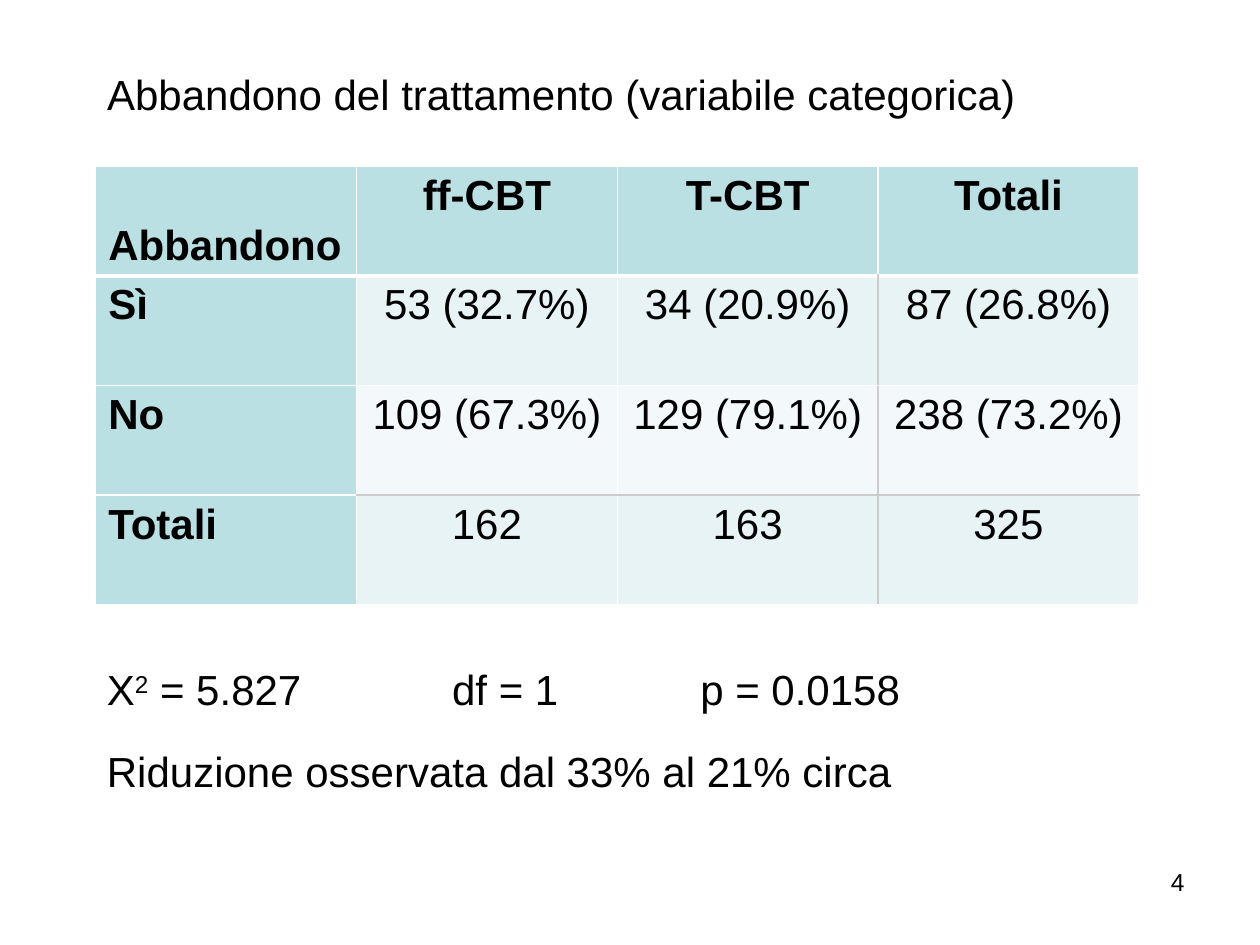
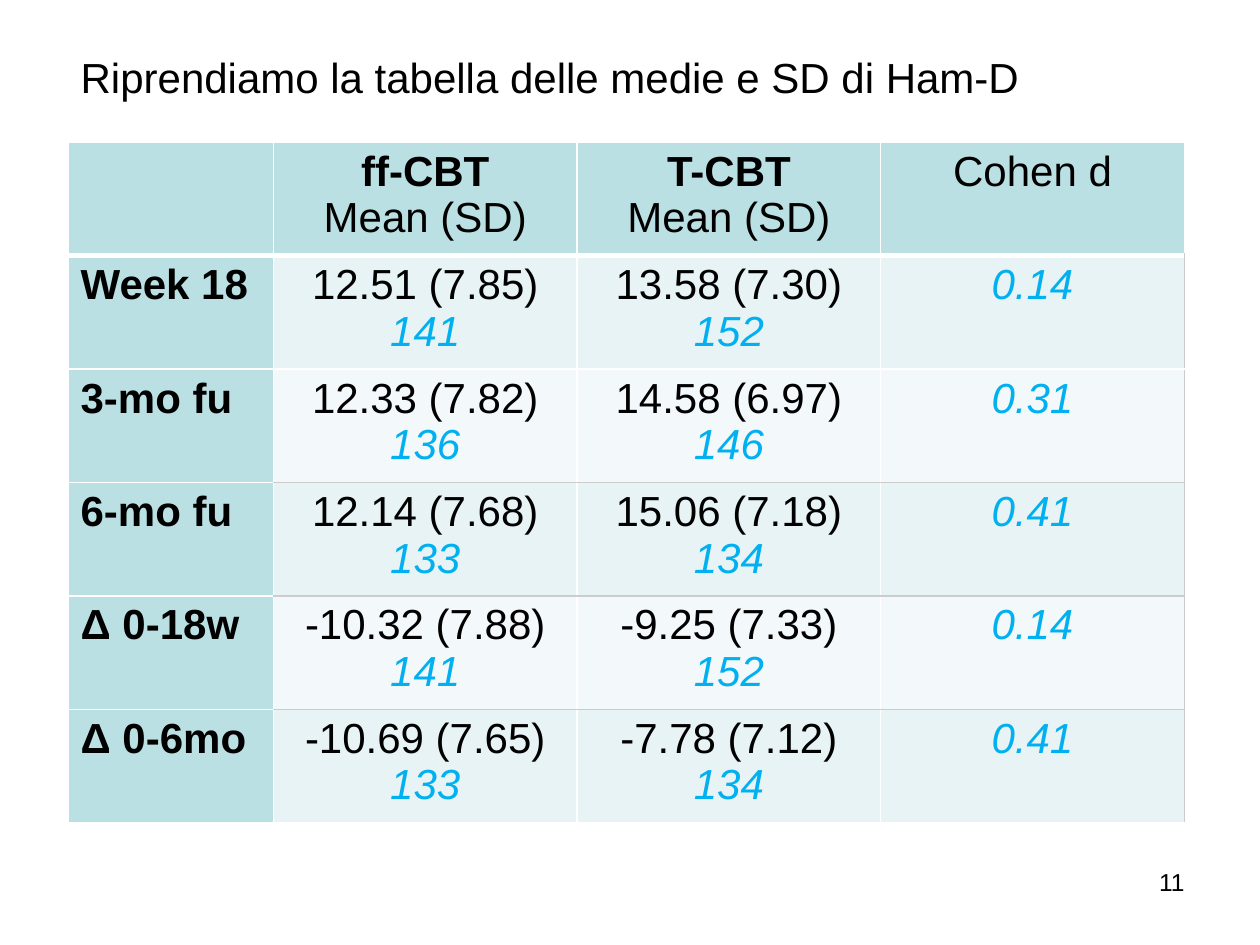
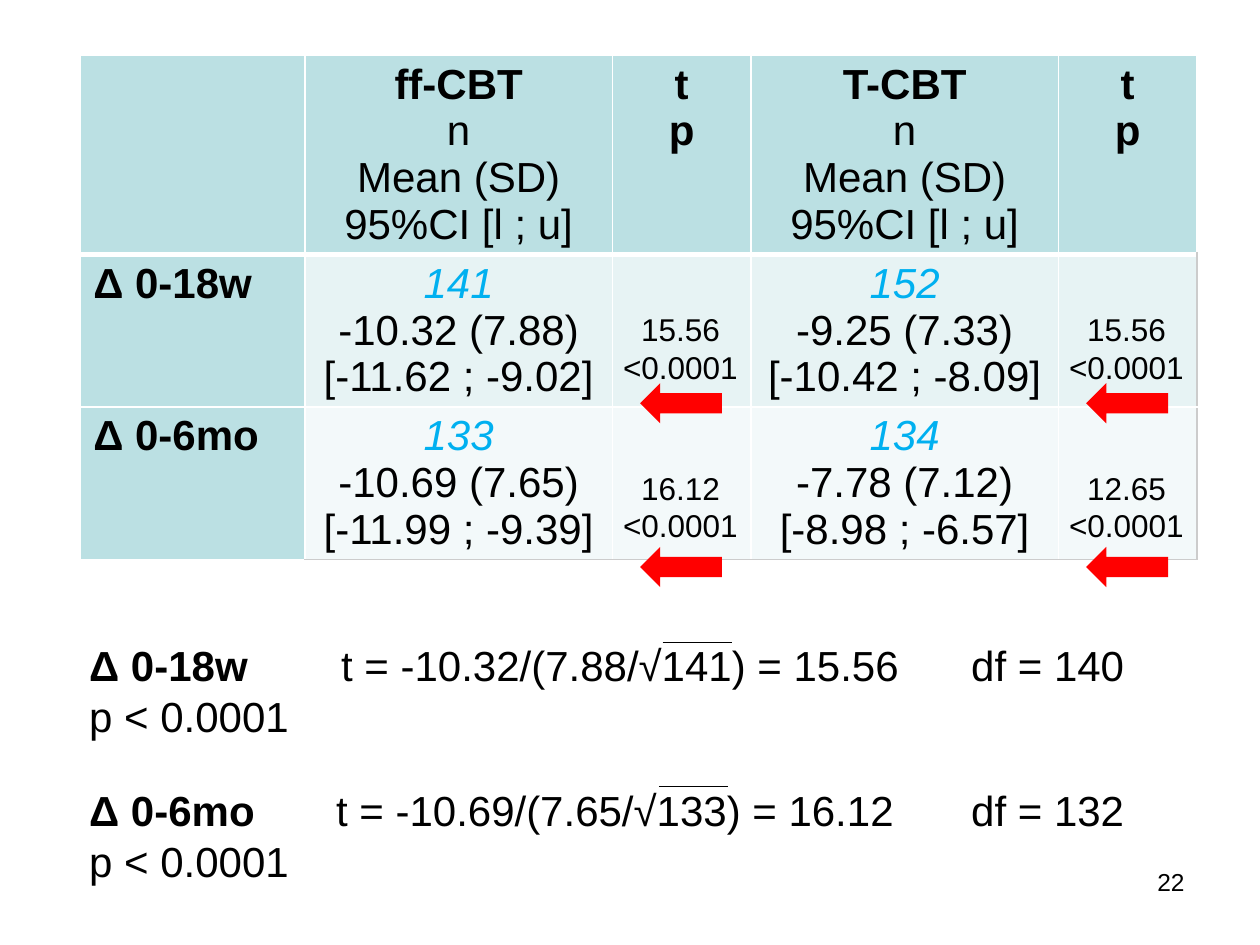
from lxml import etree
from pptx import Presentation
from pptx import util as u
from pptx.dml.color import RGBColor
from pptx.enum import shapes, text
from pptx.oxml import ns

COLORS = {"text": "000000", "accent": "00B0F0", "head": "BBE0E3", "odd": "E7F3F4",
          "even": "F3F9FA", "rule": "FFFFFF", "grey": "CCCCCC", "arrow": "FF0000"}
FONT = "Arial"
BODY, SMALL, NUMBER = 24, 18, 14
TABLE_PITCH, TEXT_PITCH = 1.11, 1.2
LEFT, CENTER, RIGHT = text.PP_ALIGN.LEFT, text.PP_ALIGN.CENTER, text.PP_ALIGN.RIGHT
# A mark at the start of a segment sets its look: * bold, _ accent italic, ^ superscript.
MARKS = {"*": {"bold": True}, "_": {"italic": True}, "^": {}}

SLIDES = [
    {"number": "4", "title": "Abbandono del trattamento (variabile categorica)",
     "title_box": (0.75, 0.49, 8.5, 0.5),
     "table_at": (0.76, 1.32), "columns": [2.07] * 4, "rows": [0.87] * 4,
     "grey_rows": {3}, "grey_columns": {3},
     "cells": [["*Abbandono", "*ff-CBT", "*T-CBT", "*Totali"],
               ["*Sì", "53 (32.7%)", "34 (20.9%)", "87 (26.8%)"],
               ["*No", "109 (67.3%)", "129 (79.1%)", "238 (73.2%)"],
               ["*Totali", "162", "163", "325"]],
     "notes": [((0.75, 5.22, 8.52, 1.16),
                "X|^2| = 5.827\tdf = 1\tp = 0.0158\nRiduzione osservata dal 33% al 21% circa",
                (2.74, 4.71))]},
    {"number": "11", "title": "Riprendiamo la tabella delle medie e SD di Ham-D",
     "title_box": (0.54, 0.36, 8.52, 0.5),
     "table_at": (0.54, 1.13), "columns": [1.63] + [2.41] * 3, "rows": [0.9] * 6,
     "grey_rows": {3, 4, 5}, "grey_columns": {4},
     "cells": [["", "*ff-CBT\nMean (SD)", "*T-CBT\nMean (SD)", "Cohen d"],
               ["*Week 18", "12.51 (7.85)\n_141", "13.58 (7.30)\n_152", "_0.14"],
               ["*3-mo fu", "12.33 (7.82)\n_136", "14.58 (6.97)\n_146", "_0.31"],
               ["*6-mo fu", "12.14 (7.68)\n_133", "15.06 (7.18)\n_134", "_0.41"],
               ["*Δ 0-18w", "-10.32 (7.88)\n_141", "-9.25 (7.33)\n_152", "_0.14"],
               ["*Δ 0-6mo", "-10.69 (7.65)\n_133", "-7.78 (7.12)\n_134", "_0.41"]],
     "notes": []},
    {"number": "22", "title": None,
     "table_at": (0.64, 0.44), "columns": [1.78, 2.44, 1.1, 2.44, 1.1],
     "rows": [1.58, 1.21, 1.21], "grey_rows": {3}, "grey_columns": {5},
     "cells": [["", "*ff-CBT\nn\nMean (SD)\n95%CI [l ; u]", "*t\n*p",
                "*T-CBT\nn\nMean (SD)\n95%CI [l ; u]", "*t\n*p"],
               ["*Δ 0-18w", "_141\n-10.32 (7.88)\n[-11.62 ; -9.02]", "",
                "_152\n-9.25 (7.33)\n[-10.42 ; -8.09]", ""],
               ["*Δ 0-6mo", "_133\n-10.69 (7.65)\n[-11.99 ; -9.39]", "",
                "_134\n-7.78 (7.12)\n[-8.98 ; -6.57]", ""]],
     "notes": [((0.61, 5.03, 8.87, 0.91),
                "*Δ 0-18w|\tt = -10.32/(7.88/√141) = 15.56\tdf = 140\tp < 0.0001", (2, 7, 9)),
               ((0.61, 6.18, 8.87, 0.91),
                "*Δ 0-6mo|\tt = -10.69/(7.65/√133) = 16.12\tdf = 132\tp < 0.0001",
                (1.96, 7, 9))]},
]


def write(frame, content, align=LEFT, size=BODY, pitch=TEXT_PITCH, gap=0, tabs=()):
    """Fill a text frame, one paragraph a line, with segments parted by |."""
    for index, line in enumerate(content.split("\n")):
        paragraph = frame.add_paragraph() if index else frame.paragraphs[0]
        settings = {"alignment": align, "line_spacing": u.Pt(round(size * pitch, 1)),
                    "space_before": u.Pt(0), "space_after": u.Pt(gap)}
        for name, value in settings.items():
            setattr(paragraph, name, value)
        if tabs:
            stops = etree.SubElement(paragraph._p.get_or_add_pPr(), ns.qn("a:tabLst"))
            for tab in tabs:
                etree.SubElement(stops, ns.qn("a:tab"), pos=str(u.Inches(tab)), algn="l")
        for segment in filter(None, line.split("|")):
            mark = segment[0] if segment[0] in MARKS else ""
            run = paragraph.add_run()
            run.text = segment[len(mark):]
            look = {"name": FONT, "size": u.Pt(size), "bold": False} | MARKS.get(mark, {})
            for name, value in look.items():
                setattr(run.font, name, value)
            color = COLORS["accent" if mark == "_" else "text"]
            run.font.color.rgb = RGBColor.from_string(color)
            if mark == "^":
                run._r.get_or_add_rPr().set("baseline", "30000")


def add_text(slide, box, content, wrap=True, **format_values):
    frame = slide.shapes.add_textbox(*map(u.Inches, box)).text_frame
    frame.word_wrap = wrap
    write(frame, content, **format_values)


presentation = Presentation()
presentation.slide_width, presentation.slide_height = u.Inches(10), u.Inches(7.5)
TITLE_ONLY, BLANK = presentation.slide_layouts[5], presentation.slide_layouts[6]

for page in SLIDES:
    slide = presentation.slides.add_slide(TITLE_ONLY if page["title"] else BLANK)
    if page["title"]:
        title = slide.shapes.title
        title.left, title.top, title.width, title.height = map(u.Inches, page["title_box"])
        title.text_frame.vertical_anchor = text.MSO_ANCHOR.TOP
        title.text_frame.auto_size = text.MSO_AUTO_SIZE.NONE
        write(title.text_frame, page["title"])
    add_text(slide, (8.54, 6.83, 0.96, 0.52), page["number"], align=RIGHT, size=NUMBER)

    columns, rows = page["columns"], page["rows"]
    frame_box = (*page["table_at"], sum(columns), sum(rows))
    table = slide.shapes.add_table(len(rows), len(columns), *map(u.Inches, frame_box)).table
    for column, width in zip(table.columns, columns):
        column.width = u.Inches(width)
    for row, height in zip(table.rows, rows):
        row.height = u.Inches(height)

    for r, line in enumerate(page["cells"]):
        for c, content in enumerate(line):
            cell = table.cell(r, c)
            in_body = r > 0 and c > 0
            properties = cell._tc.get_or_add_tcPr()
            edges = {"L": (c, "grey_columns"), "R": (c + 1, "grey_columns"),
                     "T": (r, "grey_rows"), "B": (r + 1, "grey_rows")}
            for side, (edge, grey_edges) in edges.items():
                under_head = side in "TB" and edge == 1
                border = etree.SubElement(properties, ns.qn(f"a:ln{side}"),
                                          w=str(u.Pt(3 if under_head else 1)))
                fill = etree.SubElement(border, ns.qn("a:solidFill"))
                color = "grey" if in_body and edge in page[grey_edges] else "rule"
                etree.SubElement(fill, ns.qn("a:srgbClr"), val=COLORS[color])
            cell.fill.solid()
            shade = ("odd" if r % 2 else "even") if in_body else "head"
            cell.fill.fore_color.rgb = RGBColor.from_string(COLORS[shade])
            if r == c == 0:
                cell.vertical_anchor = text.MSO_ANCHOR.BOTTOM
            write(cell.text_frame, content, align=CENTER if c else LEFT, pitch=TABLE_PITCH)

    for box, content, tabs in page["notes"]:
        add_text(slide, box, content, gap=18, tabs=tabs)

# t values and arrows over the narrow columns of the last slide
for left, t_values in ((4.84, ("15.56", "16.12")), (8.38, ("15.56", "12.65"))):
    for t_value, top, arrow_top in zip(t_values, (2.41, 3.67), (3.04, 4.34)):
        add_text(slide, (left, top, 1.12, 0.71), f"{t_value}\n<0.0001",
                 wrap=False, align=CENTER, size=SMALL)
        arrow = slide.shapes.add_shape(shapes.MSO_SHAPE.LEFT_ARROW,
                                       *map(u.Inches, (left + 0.24, arrow_top, 0.65, 0.32)))
        arrow.shadow.inherit = False
        arrow.fill.solid()
        arrow.fill.fore_color.rgb = RGBColor.from_string(COLORS["arrow"])
        arrow.line.fill.background()

# bars of the square roots
for left, top in ((5.26, 5.1), (5.23, 6.24)):
    bar = slide.shapes.add_connector(shapes.MSO_CONNECTOR.STRAIGHT,
                                     *map(u.Inches, (left, top, left + 0.55, top)))
    bar.line.width = u.Pt(0.75)
    bar.line.color.rgb = RGBColor.from_string(COLORS["text"])
    etree.SubElement(bar._element.spPr, ns.qn("a:effectLst"))

presentation.save("out.pptx")
